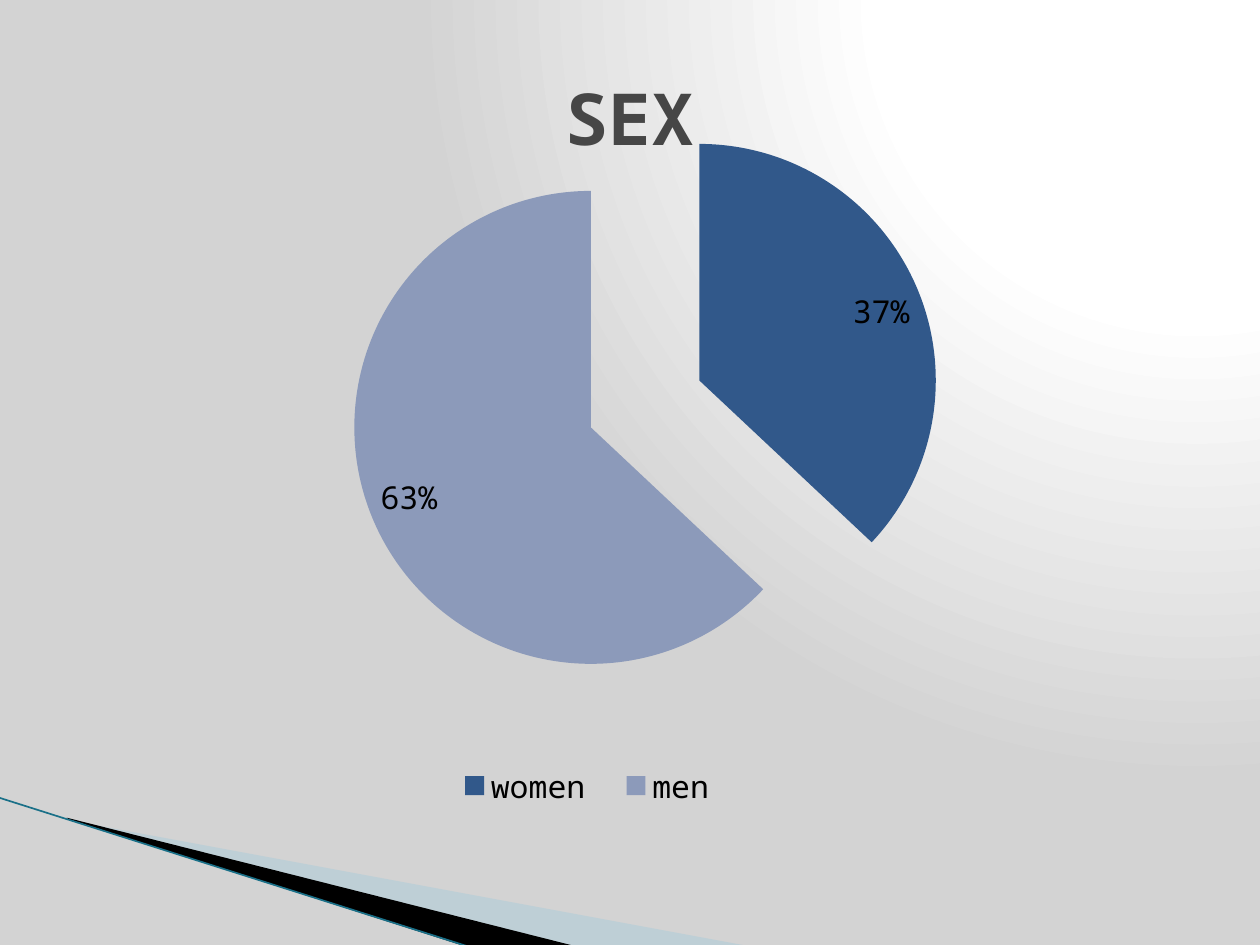
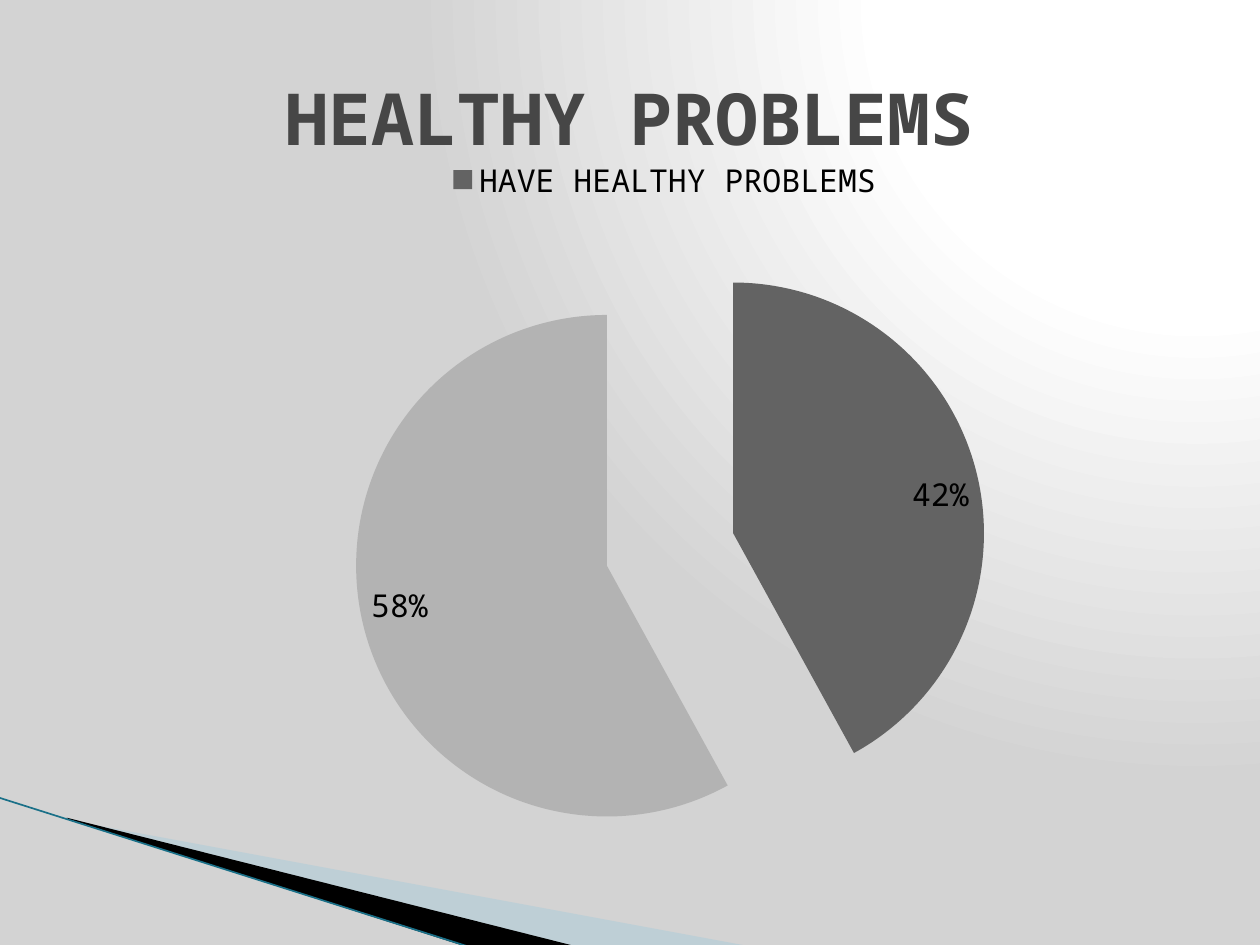
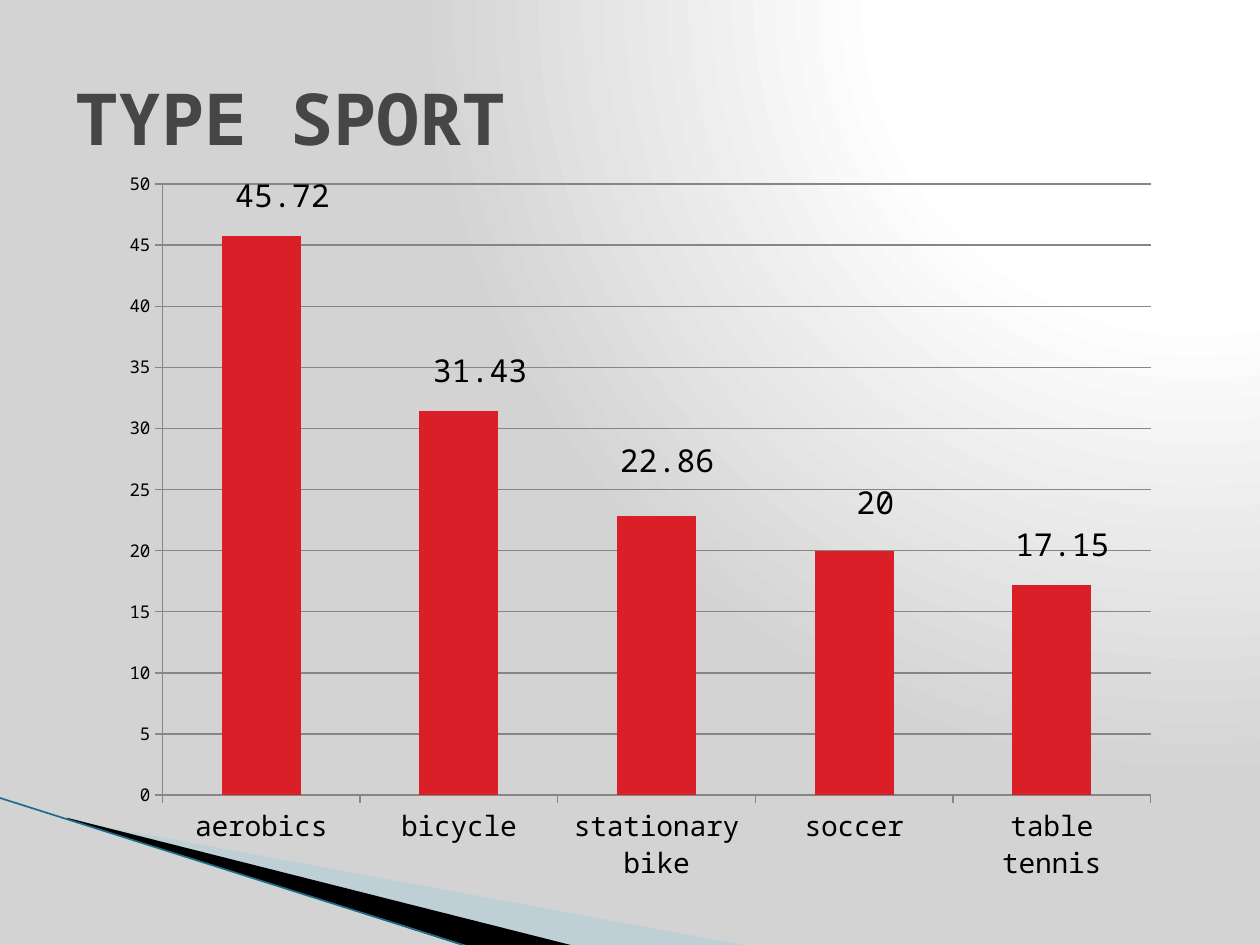
import pptx
import pptx.chart.data
import pptx.dml.color
import pptx.enum.chart
import pptx.enum.shapes
import pptx.enum.text
import pptx.oxml
import pptx.oxml.ns
import pptx.util

Inches = pptx.util.Inches
Pt = pptx.util.Pt
chart_enum = pptx.enum.chart
Align = pptx.enum.text.PP_ALIGN

FONT = "Noto Sans Mono"
COLORS = {
    "white": "FFFFFF", "gray": "D3D3D3", "title": "464646", "text": "000000",
    "light_band": "A0CBDC", "dark_band": "000000", "band_line": "1A7088",
    "women": "31588A", "men": "8C9ABA",
    "problems": "636363", "no_problems": "B3B3B3",
    "bar": "DA1F28", "grid": "868686",
}
TITLE_BOX = (0.5, 0.3, 9, 1.25)
LIGHT_BOX = (0.78, 5.47, 4.16, 1.58)
LIGHT_BAND = [(0.55, 6.51), (5.95, 7.51), (4.56, 7.51), (0.55, 6.5)]
DARK_BOX = (-0.06, 6.33, 4.16, 0.92)
DARK_BAND = [(0.53, 6.49), (4.57, 7.51), (3.72, 7.52), (0.54, 6.5)]
BAND_LINE = (-0.01, 6.33, 3.71, 7.51)


def rgb(name):
    return pptx.dml.color.RGBColor.from_string(COLORS[name])


def xml(text, *prefixes):
    """Parse an element, declaring the namespaces of the given prefixes on it."""
    head, rest = text.split(">", 1)
    slash = "/" if head.endswith("/") else ""
    head = head.rstrip("/")
    return pptx.oxml.parse_xml(f"{head} {pptx.oxml.ns.nsdecls(*prefixes)}{slash}>{rest}")


def set_background(master):
    stops = "".join(
        f'<a:gs pos="{pos * 1000}"><a:srgbClr val="{COLORS[name]}"/></a:gs>'
        for pos, name in [(0, "white"), (40, "white"), (100, "gray")])
    cSld = master.element.cSld
    for bg in cSld.xpath("p:bg"):
        cSld.remove(bg)
    cSld.insert(0, xml(
        f'<p:bg><p:bgPr><a:gradFill><a:gsLst>{stops}</a:gsLst><a:path path="circle">'
        '<a:fillToRect l="95000" t="-106000" r="5000" b="206000"/></a:path></a:gradFill>'
        "<a:effectLst/></p:bgPr></p:bg>", "p", "a"))


def set_frame(sp, box):
    """Give a freeform another frame while its outline stays in place."""
    left, top, width, height = map(Inches, box)
    dx, dy = sp.left - left, sp.top - top
    outline = sp.element.xpath(".//a:pathLst/*")[0]
    outline.set("w", str(width))
    outline.set("h", str(height))
    for pt in outline.xpath(".//a:pt"):
        pt.set("x", str(int(pt.get("x")) + dx))
        pt.set("y", str(int(pt.get("y")) + dy))
    sp.left, sp.top, sp.width, sp.height = left, top, width, height


def add_band(slide, box, points, color):
    start, *others = [(Inches(x), Inches(y)) for x, y in points]
    builder = slide.shapes.build_freeform(*start)
    builder.add_line_segments(others, close=True)
    sp = builder.convert_to_shape()
    set_frame(sp, box)
    sp.shadow.inherit = False
    sp.fill.solid()
    sp.fill.fore_color.rgb = rgb(color)
    sp.line.fill.background()
    return sp


def add_master_bands(master, slide):
    """Draw the corner bands on the slide, then move them to the master."""
    light = add_band(slide, LIGHT_BOX, LIGHT_BAND, "light_band")
    light.element.xpath(".//a:solidFill/a:srgbClr")[0].append(
        xml('<a:alpha val="40000"/>', "a"))
    dark = add_band(slide, DARK_BOX, DARK_BAND, "dark_band")
    line = slide.shapes.add_connector(
        pptx.enum.shapes.MSO_CONNECTOR.STRAIGHT, *map(Inches, BAND_LINE))
    line.line.color.rgb = rgb("band_line")
    line.line.width = Pt(0.95)
    line.element.spPr.append(xml("<a:effectLst/>", "a"))
    for number, sp in enumerate((light, dark, line), 101):
        sp.element.xpath(".//p:cNvPr")[0].set("id", str(number))
        master.element.cSld.spTree.append(sp.element)


def add_title(slide, text, align):
    title = slide.shapes.title
    title.left, title.top, title.width, title.height = map(Inches, TITLE_BOX)
    tf = title.text_frame
    tf.text = text
    tf.vertical_anchor = pptx.enum.text.MSO_ANCHOR.MIDDLE
    tf.auto_size = pptx.enum.text.MSO_AUTO_SIZE.NONE
    p = tf.paragraphs[0]
    p.alignment = align
    p.font.name, p.font.size, p.font.bold = FONT, Pt(41), True
    p.font.color.rgb = rgb("title")


def manual_layout(x, y, w=None, h=None, inner=False):
    """Layout in fractions of the chart; without a size, x and y are offsets."""
    parts = '<c:layoutTarget val="inner"/>' if inner else ""
    if w:
        parts += '<c:xMode val="edge"/><c:yMode val="edge"/>'
    parts += f'<c:x val="{x}"/><c:y val="{y}"/>'
    if w:
        parts += f'<c:w val="{w}"/><c:h val="{h}"/>'
    return xml(f"<c:layout><c:manualLayout>{parts}</c:manualLayout></c:layout>", "c")


def remove_layout(element):
    for layout in element.xpath("c:layout"):
        element.remove(layout)


def add_chart(slide, box, kind, categories, values, size):
    data = pptx.chart.data.CategoryChartData()
    data.categories = categories
    data.add_series("Series 1", values)
    chart = slide.shapes.add_chart(kind, *map(Inches, box), data).chart
    chart.has_title = False
    chart.has_legend = False
    chart.font.name, chart.font.size = FONT, Pt(size)
    chart.font.color.rgb = rgb("text")
    return chart


def add_legend(chart, box, hidden=()):
    chart.has_legend = True
    legend = chart.legend
    legend.position = chart_enum.XL_LEGEND_POSITION.BOTTOM
    legend.include_in_layout = False
    legend.font.name, legend.font.size = FONT, Pt(18)
    legend.font.color.rgb = rgb("text")
    element = legend._element
    remove_layout(element)
    legend_pos = element.xpath("c:legendPos")[0]
    legend_pos.addnext(manual_layout(*box))
    for index in hidden:
        legend_pos.addnext(xml(
            f'<c:legendEntry><c:idx val="{index}"/><c:delete val="1"/></c:legendEntry>', "c"))


def add_pie(slide, box, slices, plot_box, explosion, legend_box, hidden=()):
    """Exploded pie; slices are (category, percentage, colour name)."""
    categories, values, colors = zip(*slices)
    chart = add_chart(slide, box, chart_enum.XL_CHART_TYPE.PIE, categories, values, 18)
    plot_area = chart._chartSpace.xpath(".//c:plotArea")[0]
    remove_layout(plot_area)
    plot_area.insert(0, manual_layout(*plot_box, inner=True))
    plot = chart.plots[0]
    plot.vary_by_categories = True
    series = plot.series[0]
    for index, color in enumerate(colors):
        fill = series.points[index].format.fill
        fill.solid()
        fill.fore_color.rgb = rgb(color)
    series._element.xpath("c:dPt")[0].addprevious(
        xml(f'<c:explosion val="{explosion}"/>', "c"))
    labels = series.data_labels
    labels.number_format, labels.number_format_is_linked = "0%", False
    labels.position = chart_enum.XL_LABEL_POSITION.INSIDE_END
    labels.show_value, labels.show_percentage = False, True
    add_legend(chart, legend_box, hidden)


def add_columns(slide, box, columns):
    """Column chart; columns are (category, value, label offset)."""
    categories, values, offsets = zip(*columns)
    chart = add_chart(slide, box, chart_enum.XL_CHART_TYPE.COLUMN_CLUSTERED,
                      categories, values, 10)
    plot = chart.plots[0]
    plot.vary_by_categories = False
    plot.gap_width = 150
    series = plot.series[0]
    series.format.fill.solid()
    series.format.fill.fore_color.rgb = rgb("bar")
    series.data_labels.show_value = True
    series.data_labels.font.size = Pt(18)
    for index, offset in enumerate(offsets):
        label = series.points[index].data_label
        label.font.size = Pt(18)
        label.position = chart_enum.XL_LABEL_POSITION.OUTSIDE_END
        idx = series._element.xpath(f'.//c:dLbl/c:idx[@val="{index}"]')[0]
        idx.addnext(manual_layout(*offset))
    for leader_lines in series._element.xpath(".//c:showLeaderLines"):
        leader_lines.set("val", "0")
    series._element.xpath("c:dLbls")[0].append(xml(
        '<c:extLst><c:ext uri="{CE6537A1-D6FC-4f65-9D91-7224C49458BB}" '
        'xmlns:c15="http://schemas.microsoft.com/office/drawing/2012/chart">'
        '<c15:showLeaderLines val="0"/></c:ext></c:extLst>', "c"))

    value_axis, category_axis = chart.value_axis, chart.category_axis
    value_axis.minimum_scale, value_axis.maximum_scale = 0, 50
    value_axis.major_unit = 5
    value_axis.has_major_gridlines = True
    category_axis.tick_labels.font.size = Pt(16)
    for axis in (value_axis, category_axis):
        axis.major_tick_mark = chart_enum.XL_TICK_MARK.OUTSIDE
    for part in (value_axis, category_axis, value_axis.major_gridlines):
        part.format.line.color.rgb = rgb("grid")
        part.format.line.width = Pt(0.75)


def add_sex_slide(slide):
    add_title(slide, "SEX", Align.CENTER)
    add_pie(slide, (0.94, 0.86, 8.36, 5.94),
            [("women", 37, "women"), ("men", 63, "men")],
            plot_box=(0, 0, 1, 0.79), explosion=25,
            legend_box=(0.3, 0.87, 0.29, 0.07))


def add_problems_slide(slide):
    add_title(slide, "HEALTHY PROBLEMS", Align.CENTER)
    add_pie(slide, (0.94, 1.17, 8.67, 5.7),
            [("HAVE HEALTHY PROBLEMS", 42, "problems"),
             ("DONT HAVE HEALTHY PROBLEMS", 58, "no_problems")],
            plot_box=(0.01, 0.12, 0.99, 0.88), explosion=26,
            legend_box=(0.29, 0.01, 0.42, 0.07), hidden=[1])


def add_sport_slide(slide):
    add_title(slide, "TYPE SPORT", Align.LEFT)
    add_columns(slide, (0.86, 1.25, 8.44, 5.86),
                [("aerobics", 45.72, (0.02, -0.02)),
                 ("bicycle", 31.43, (0.02, -0.02)),
                 ("stationary bike", 22.86, (0.01, -0.04)),
                 ("soccer", 20, (0.02, -0.03)),
                 ("table tennis", 17.15, (0.01, -0.02))])


def main():
    prs = pptx.Presentation()
    prs.slide_width, prs.slide_height = Inches(10), Inches(7.5)
    title_only = prs.slide_layouts[5]
    slides = [prs.slides.add_slide(title_only) for _ in range(3)]
    set_background(prs.slide_master)
    add_master_bands(prs.slide_master, slides[0])
    for build, slide in zip((add_sex_slide, add_problems_slide, add_sport_slide), slides):
        build(slide)
    prs.save("out.pptx")


if __name__ == "__main__":
    main()
